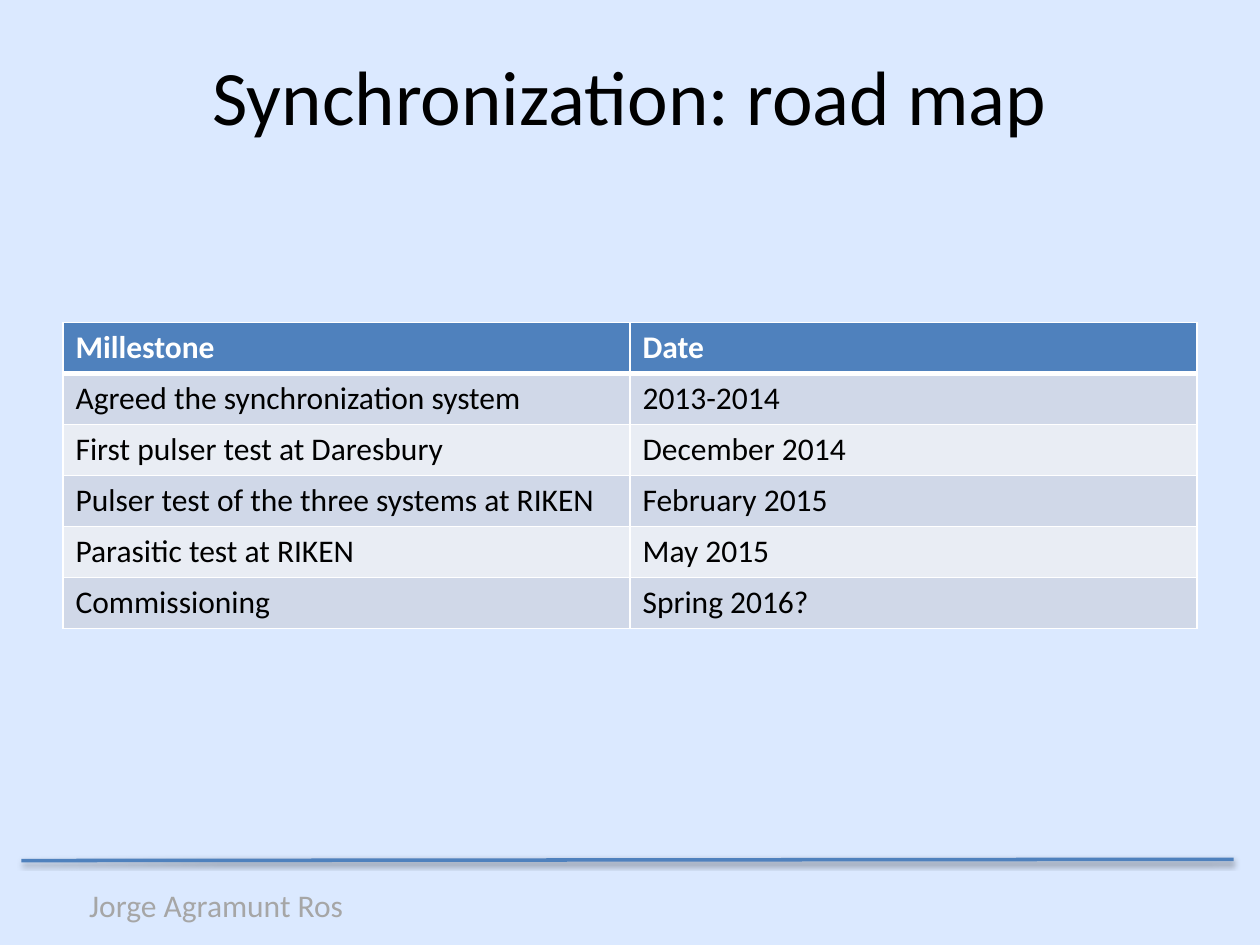
"""Build the synchronization road map slide with its milestone table."""

from dataclasses import dataclass

from lxml import etree
from pptx import Presentation
from pptx.dml.color import RGBColor
from pptx.enum.shapes import MSO_CONNECTOR
from pptx.enum.text import MSO_ANCHOR, PP_ALIGN
from pptx.oxml import parse_xml
from pptx.oxml.ns import nsdecls, qn
from pptx.slide import Slide
from pptx.util import Inches, Pt


@dataclass(frozen=True)
class Theme:
    font: str = "Calibri"
    background: str = "DBE9FF"
    accent: str = "4F81BD"
    band_dark: str = "D0D8E8"
    band_light: str = "E9EDF4"
    ink: str = "000000"
    paper: str = "FFFFFF"
    muted: str = "A6A6A6"
    title_size: int = 44
    body_size: int = 18
    thin_border: int = 1
    thick_border: int = 3


@dataclass(frozen=True)
class Milestone:
    name: str
    date: str


@dataclass(frozen=True)
class TextStyle:
    size: int
    color: str
    bold: bool = False


@dataclass(frozen=True)
class Area:
    left: float
    top: float
    width: float
    height: float

    def lengths(self) -> tuple:
        return tuple(Inches(v) for v in (self.left, self.top, self.width, self.height))


THEME = Theme()
HEADER = Milestone("Millestone", "Date")
MILESTONES = [
    Milestone("Agreed the synchronization system", "2013-2014"),
    Milestone("First pulser test at Daresbury", "December 2014"),
    Milestone("Pulser test of the three systems at RIKEN", "February 2015"),
    Milestone("Parasitic test at RIKEN", "May 2015"),
    Milestone("Commissioning", "Spring 2016?"),
]


def add_span(para, text: str, style: TextStyle) -> None:
    """Append one styled run to a paragraph."""
    span = para.add_run()
    span.text = text
    span.font.name = THEME.font
    span.font.size = Pt(style.size)
    span.font.bold = style.bold
    span.font.color.rgb = RGBColor.from_string(style.color)


def add_label(slide: Slide, area: Area, text: str, style: TextStyle,
              align: PP_ALIGN, wrap: bool) -> None:
    """Add a one-line text box centred vertically in its area."""
    box = slide.shapes.add_textbox(*area.lengths())
    frame = box.text_frame
    frame.word_wrap = wrap
    frame.vertical_anchor = MSO_ANCHOR.MIDDLE
    para = frame.paragraphs[0]
    para.alignment = align
    add_span(para, text, style)


def add_footer_rule(slide: Slide) -> None:
    """Draw the shadowed rule above the footer."""
    rule = slide.shapes.add_connector(
        MSO_CONNECTOR.STRAIGHT, Inches(0.17), Inches(6.83), Inches(9.79), Inches(6.82))
    rule.line.color.rgb = RGBColor.from_string(THEME.accent)
    rule.line.width = Pt(2)
    rule._element.spPr.append(parse_xml(
        f'<a:effectLst {nsdecls("a")}>'
        f'<a:outerShdw blurRad="{Pt(3.1)}" dist="{Pt(1.6)}" dir="5400000" rotWithShape="0">'
        f'<a:srgbClr val="{THEME.ink}"><a:alpha val="38000"/></a:srgbClr>'
        '</a:outerShdw></a:effectLst>'))


def set_borders(cell, top: int, bottom: int) -> None:
    """Give a filled cell its four white borders."""
    thin = THEME.thin_border
    widths = {"lnL": thin, "lnR": thin, "lnT": top, "lnB": bottom}
    properties = cell._tc.get_or_add_tcPr()
    for position, (side, width) in enumerate(widths.items()):
        border = etree.Element(qn(f"a:{side}"), w=str(Pt(width)))
        fill = etree.SubElement(border, qn("a:solidFill"))
        etree.SubElement(fill, qn("a:srgbClr"), val=THEME.paper)
        properties.insert(position, border)


def add_milestone_table(slide: Slide, area: Area) -> None:
    """Add the banded table of milestones and dates."""
    rows = [HEADER, *MILESTONES]
    table = slide.shapes.add_table(len(rows), 2, *area.lengths()).table
    table.horz_banding = False
    for column in table.columns:
        column.width = Inches(area.width / 2)
    header_style = TextStyle(THEME.body_size, THEME.paper, bold=True)
    body_style = TextStyle(THEME.body_size, THEME.ink)
    for index, milestone in enumerate(rows):
        table.rows[index].height = Inches(area.height / len(rows))
        band = THEME.band_dark if index % 2 else THEME.band_light
        color = band if index else THEME.accent
        top = THEME.thick_border if index == 1 else THEME.thin_border
        bottom = THEME.thin_border if index else THEME.thick_border
        for column, text in enumerate((milestone.name, milestone.date)):
            cell = table.cell(index, column)
            cell.fill.solid()
            cell.fill.fore_color.rgb = RGBColor.from_string(color)
            set_borders(cell, top, bottom)
            add_span(cell.text_frame.paragraphs[0], text,
                     body_style if index else header_style)


def main() -> None:
    """Assemble and save the deck."""
    deck = Presentation()
    deck.slide_width, deck.slide_height = Inches(10), Inches(7.5)
    page = deck.slides.add_slide(deck.slide_layouts[6])
    page.background.fill.solid()
    page.background.fill.fore_color.rgb = RGBColor.from_string(THEME.background)
    add_footer_rule(page)
    add_label(page, Area(0.61, 6.98, 2.26, 0.4), "Jorge Agramunt Ros",
              TextStyle(THEME.body_size, THEME.muted), PP_ALIGN.LEFT, wrap=False)
    add_label(page, Area(0.5, 0.3, 9, 0.9), "Synchronization: road map",
              TextStyle(THEME.title_size, THEME.ink), PP_ALIGN.CENTER, wrap=True)
    add_milestone_table(page, Area(0.5, 2.56, 9, 2.43))
    deck.save("out.pptx")


if __name__ == "__main__":
    main()
